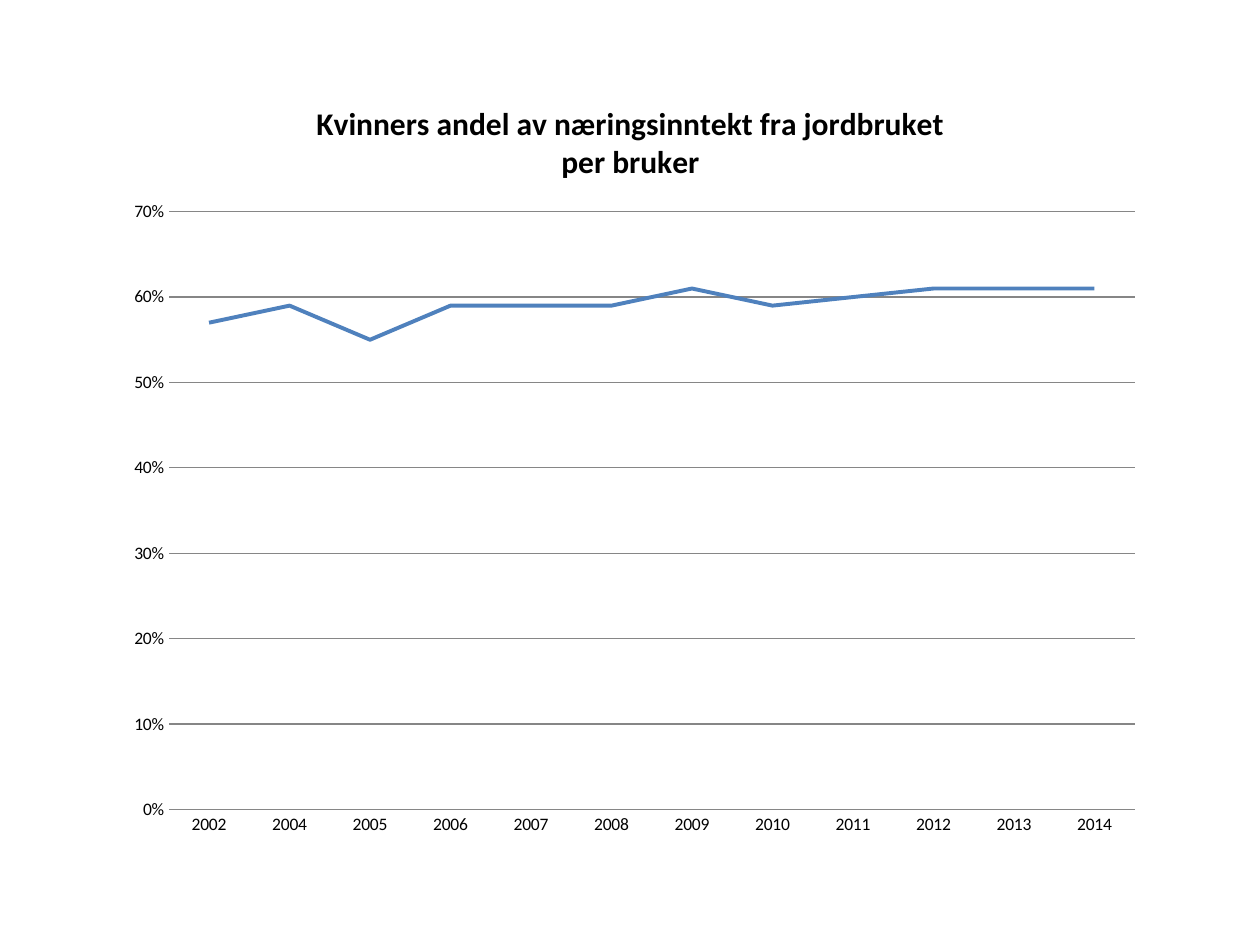
from lxml import etree
from pptx import Presentation
from pptx.chart.data import CategoryChartData
from pptx.dml.color import RGBColor
from pptx.enum.chart import XL_CHART_TYPE as ChartType, XL_TICK_MARK as TickMark
from pptx.oxml.ns import qn
from pptx.util import Pt

COLORS = {"text": "000000", "share": "4F81BD", "grid": "868686"}
FONT = "Calibri"
YEARS = ["2002", *(str(year) for year in range(2004, 2015))]
SHARES = [0.57, 0.59, 0.55, 0.59, 0.59, 0.59, 0.61, 0.59, 0.6, 0.61, 0.61, 0.61]
HEADING = ["Kvinners andel av næringsinntekt fra jordbruket", "per bruker"]


def color(name):
    return RGBColor.from_string(COLORS[name])


def style_font(font, size, bold=False):
    font.name = FONT
    font.size = Pt(size)
    font.bold = bold
    font.color.rgb = color("text")


def style_line(line, name, width):
    line.color.rgb = color(name)
    line.width = Pt(width)


def set_layout(parent, before, **settings):
    for old in parent.findall(qn("c:layout")):
        parent.remove(old)
    layout = etree.Element(qn("c:layout"))
    manual = etree.SubElement(layout, qn("c:manualLayout"))
    for tag, value in settings.items():
        etree.SubElement(manual, qn(f"c:{tag}")).set("val", str(value))
    parent.find(qn(before)).addprevious(layout)


def add_heading(chart):
    heading = chart.chart_title
    frame = heading.text_frame
    for index, words in enumerate(HEADING):
        paragraph = frame.paragraphs[0] if index == 0 else frame.add_paragraph()
        run = paragraph.add_run()
        run.text = words
        style_font(run.font, 18, True)
    heading.include_in_layout = False
    set_layout(heading._element, "c:overlay",
               xMode="edge", yMode="edge", x=0.19, y=0.03)


def add_share_chart(slide, left, top, width, height):
    data = CategoryChartData(number_format="0%")
    data.categories = YEARS
    data.add_series("Series 1", SHARES)
    chart = slide.shapes.add_chart(
        ChartType.LINE, Pt(left), Pt(top), Pt(width), Pt(height), data).chart
    style_font(chart.font, 10)
    chart.has_legend = False
    add_heading(chart)

    plot = chart.plots[0]
    plot.vary_by_categories = False
    share = plot.series[0]
    share.smooth = False
    style_line(share.format.line, "share", 2.25)

    years, percent = chart.category_axis, chart.value_axis
    for axis in (years, percent):
        axis.major_tick_mark = axis.minor_tick_mark = TickMark.NONE
    style_line(years.format.line, "grid", 0.75)
    percent.minimum_scale, percent.maximum_scale, percent.major_unit = 0, 0.7, 0.1
    percent.format.line.fill.background()
    percent.tick_labels.number_format = "0%"
    percent.tick_labels.number_format_is_linked = False
    style_line(percent.major_gridlines.format.line, "grid", 0.75)

    plot_area = chart._chartSpace.chart.plotArea
    set_layout(plot_area, "c:lineChart", layoutTarget="inner", xMode="edge",
               yMode="edge", x=0.052, y=0.176, w=0.927, h=0.773)


def main():
    deck = Presentation()
    deck.slide_width, deck.slide_height = Pt(720), Pt(540)
    slide = deck.slides.add_slide(deck.slide_layouts[6])
    add_share_chart(slide, 65.5, 43.2, 595.5, 442)
    deck.save("out.pptx")


if __name__ == "__main__":
    main()
